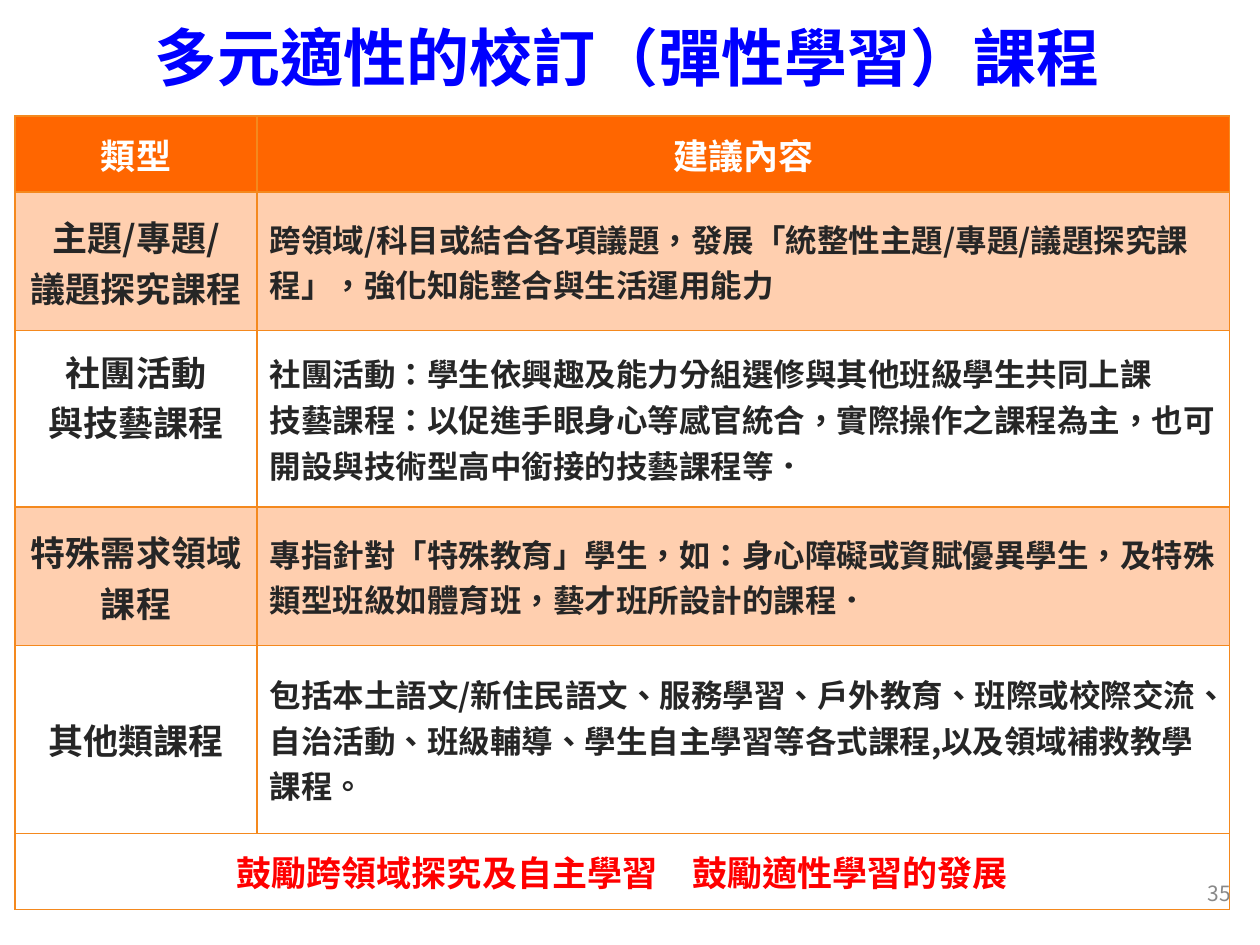
"""Build the slide on diverse school-based (flexible learning) courses."""
from dataclasses import dataclass
from typing import Optional

from lxml import etree
from pptx import Presentation
from pptx.dml.color import RGBColor
from pptx.enum.lang import MSO_LANGUAGE_ID
from pptx.enum.text import MSO_ANCHOR, PP_ALIGN
from pptx.oxml.ns import qn
from pptx.util import Inches, Pt

LEFT, CENTER, RIGHT = PP_ALIGN.LEFT, PP_ALIGN.CENTER, PP_ALIGN.RIGHT
TOP, MIDDLE = MSO_ANCHOR.TOP, MSO_ANCHOR.MIDDLE
CHINESE = MSO_LANGUAGE_ID.TRADITIONAL_CHINESE
TITLE_ONLY = 5


@dataclass(frozen=True)
class Theme:
    font: str = "Noto Sans CJK SC"
    title: str = "0000FF"
    header_fill: str = "FF6600"
    band_fill: str = "FFCFAF"
    plain_fill: str = "FFFFFF"
    border: str = "F4891E"
    header_text: str = "FFFFFF"
    body_text: str = "262626"
    closing_text: str = "FF0000"
    number_text: str = "888888"
    title_size: int = 36
    label_size: int = 20
    detail_size: int = 18
    number_size: int = 12
    border_width: int = 1
    margin: float = 0.1


@dataclass(frozen=True)
class Style:
    size: int
    color: str
    align: PP_ALIGN = CENTER
    bold: bool = True


@dataclass(frozen=True)
class Course:
    height: float
    kind: str
    advice: str
    kind_bottom: float = 0.1


THEME = Theme()
TITLE = Style(THEME.title_size, THEME.title)
HEADER = Style(THEME.label_size, THEME.header_text)
LABEL = Style(THEME.label_size, THEME.body_text)
DETAIL = Style(THEME.detail_size, THEME.body_text, LEFT)
CLOSING = Style(THEME.label_size, THEME.closing_text)
NUMBER = Style(THEME.number_size, THEME.number_text, RIGHT, False)

COLUMN_WIDTHS = (1.92, 7.72)
END_ROW_HEIGHT = 0.6
COURSES = (
    Course(1.1, "主題/專題/\n議題探究課程",
           "跨領域/科目或結合各項議題，發展「統整性主題/專題/議題探究課程」，強化知能整合與生活運用能力"),
    Course(1.4, "社團活動\n與技藝課程",
           "社團活動：學生依興趣及能力分組選修與其他班級學生共同上課\n"
           "技藝課程：以促進手眼身心等感官統合，實際操作之課程為主，也可開設與技術型高中銜接的技藝課程等．",
           kind_bottom=0.46),
    Course(1.1, "特殊需求領域課程",
           "專指針對「特殊教育」學生，如：身心障礙或資賦優異學生，及特殊類型班級如體育班，藝才班所設計的課程．"),
    Course(1.49, "其他類課程",
           "包括本土語文/新住民語文、服務學習、戶外教育、班際或校際交流、自治活動、班級輔導、"
           "學生自主學習等各式課程,以及領域補救教學課程。"),
)


def write(frame, text: str, style: Style) -> None:
    """Fill a text frame, one paragraph per line."""
    frame.text = text
    frame.word_wrap = True
    for para in frame.paragraphs:
        para.alignment = style.align
        font = para.font
        font.size, font.bold, font.name = Pt(style.size), style.bold, THEME.font
        font.color.rgb = RGBColor.from_string(style.color)
        font.language_id = CHINESE
        defaults = para._p.pPr.find(qn("a:defRPr"))
        etree.SubElement(defaults, qn("a:ea"), typeface=THEME.font)


def set_box(box, left: float, top: float, width: float, height: float) -> None:
    """Place a box and give its text even margins and a middle anchor."""
    box.left, box.top, box.width, box.height = map(Inches, (left, top, width, height))
    frame = box.text_frame
    frame.margin_left = frame.margin_right = Inches(THEME.margin)
    frame.margin_top = frame.margin_bottom = Inches(THEME.margin)
    frame.vertical_anchor = MIDDLE


def draw_borders(cell) -> None:
    """Outline all four sides of a cell."""
    properties = cell._tc.get_or_add_tcPr()
    for side in ("lnL", "lnR", "lnT", "lnB"):
        line = etree.SubElement(properties, qn(f"a:{side}"), w=str(Pt(THEME.border_width)))
        fill = etree.SubElement(line, qn("a:solidFill"))
        etree.SubElement(fill, qn("a:srgbClr"), val=THEME.border)


def fill_cell(cell, text: Optional[str], style: Style, fill: str,
              anchor: MSO_ANCHOR = MIDDLE, bottom: float = THEME.margin) -> None:
    """Format a table cell and write its text, if any."""
    draw_borders(cell)
    cell.fill.solid()
    cell.fill.fore_color.rgb = RGBColor.from_string(fill)
    cell.margin_left = cell.margin_right = cell.margin_top = Inches(THEME.margin)
    cell.margin_bottom = Inches(bottom)
    cell.vertical_anchor = anchor
    if text:
        write(cell.text_frame, text, style)


def draw_table(page) -> None:
    """Add the table of course types and advice."""
    heights = [END_ROW_HEIGHT, *(course.height for course in COURSES), END_ROW_HEIGHT]
    table = page.shapes.add_table(
        len(heights), len(COLUMN_WIDTHS), Inches(0.12), Inches(0.92),
        Inches(sum(COLUMN_WIDTHS)), Inches(sum(heights))).table
    table.first_row = table.horz_banding = False
    for column, width in zip(table.columns, COLUMN_WIDTHS):
        column.width = Inches(width)
    for row, height in zip(table.rows, heights):
        row.height = Inches(height)

    for index, heading in enumerate(("類型", "建議內容")):
        fill_cell(table.cell(0, index), heading, HEADER, THEME.header_fill, TOP)
    for index, course in enumerate(COURSES, start=1):
        fill = THEME.band_fill if index % 2 else THEME.plain_fill
        fill_cell(table.cell(index, 0), course.kind, LABEL, fill, bottom=course.kind_bottom)
        fill_cell(table.cell(index, 1), course.advice, DETAIL, fill)

    last = len(heights) - 1
    table.cell(last, 0).merge(table.cell(last, 1))
    closing = "鼓勵跨領域探究及自主學習　鼓勵適性學習的發展"
    for index, text in enumerate((closing, None)):
        fill_cell(table.cell(last, index), text, CLOSING, THEME.plain_fill, TOP)


def main() -> None:
    """Create and save the deck."""
    deck = Presentation()
    deck.slide_width, deck.slide_height = Inches(10), Inches(7.5)
    page = deck.slides.add_slide(deck.slide_layouts[TITLE_ONLY])
    title = page.shapes.title
    set_box(title, 0.2, 0.03, 9.55, 0.84)
    write(title.text_frame, "多元適性的校訂（彈性學習）課程", TITLE)
    draw_table(page)
    number = page.shapes.add_textbox(0, 0, 0, 0)
    set_box(number, 9.27, 6.8, 0.6, 0.57)
    write(number.text_frame, "35", NUMBER)
    deck.save("out.pptx")


if __name__ == "__main__":
    main()
